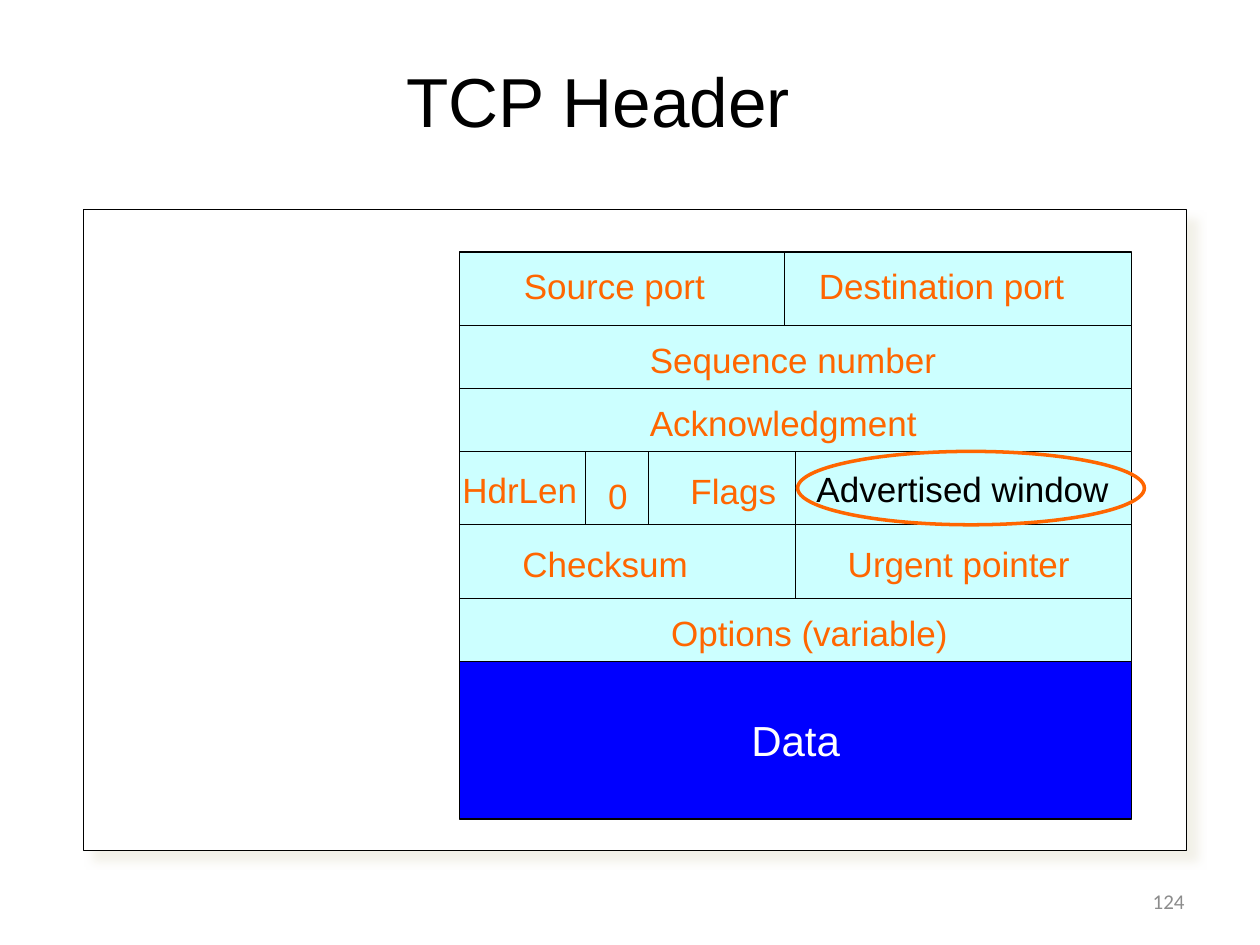
from lxml import etree
from pptx import Presentation
from pptx.dml.color import RGBColor
from pptx.enum.shapes import MSO_CONNECTOR, MSO_SHAPE
from pptx.enum.text import MSO_ANCHOR, MSO_AUTO_SIZE, PP_ALIGN
from pptx.oxml import parse_xml
from pptx.oxml.ns import qn
from pptx.util import Cm, Pt

BLACK, WHITE, ORANGE = "000000", "FFFFFF", "FF6600"
PALE, BLUE, GREY = "CCFFFF", "0000FF", "8C8C8C"

# All lengths are in centimetres.
HEADER_LEFT, HEADER_TOP, HEADER_WIDTH = 9.27, 5.08, 13.54
HALF = HEADER_WIDTH / 2

# Each row: height, field widths, labels as (text, left, drop below row top, width)
ROWS = [
    (1.48, [6.55, 6.99], [("Source port", 10.31, 0.13, 4.25),
                          ("Destination port", 16.26, 0.13, 5.55)]),
    (1.27, [HEADER_WIDTH], [("Sequence number", 12.85, 0.13, 6.4)]),
    (1.27, [HEADER_WIDTH], [("Acknowledgment", 12.85, 0.13, 6)]),
    (1.48, [HALF, HALF], [("Advertised window", 16.21, 0.2, 6.48),
                          ("HdrLen", 9.07, 0.22, 2.97),
                          ("Flags", 13.67, 0.25, 2.24),
                          ("0", 12.01, 0.35, 0.91)]),
    (1.48, [HALF, HALF], [("Checksum", 10.28, 0.24, 3.85),
                          ("Urgent pointer", 16.84, 0.24, 5.05)]),
    (1.27, [HEADER_WIDTH], [("Options (variable)", 13.28, 0.14, 6.2)]),
]
FLAGS_ROW = 3
FLAG_DIVIDERS = [11.81, 13.08]
HIGHLIGHTED = "Advertised window"
DATA_HEIGHT, LABEL_HEIGHT = 3.18, 1.1


def color(hex_value):
    return RGBColor.from_string(hex_value)


def write(shape, text, size, hex_value, font="Arial", align=PP_ALIGN.LEFT, **frame_format):
    frame = shape.text_frame
    for name, value in frame_format.items():
        setattr(frame, name, value)
    paragraph = frame.paragraphs[0]
    paragraph.alignment = align
    run = paragraph.add_run()
    run.text = text
    for name, value in {"size": Pt(size), "name": font}.items():
        setattr(run.font, name, value)
    run.font.color.rgb = color(hex_value)


def add_box(slide, left, top, width, height, fill=None, line=BLACK, line_width=0.75,
            kind=MSO_SHAPE.RECTANGLE):
    shape = slide.shapes.add_shape(kind, Cm(left), Cm(top), Cm(width), Cm(height))
    shape.shadow.inherit = False
    if fill:
        shape.fill.solid()
        shape.fill.fore_color.rgb = color(fill)
    else:
        shape.fill.background()
    shape.line.color.rgb = color(line)
    shape.line.width = Pt(line_width)
    return shape


def add_panel(slide):
    """Add the white backing panel with its soft shadow."""
    panel = add_box(slide, 1.69, 4.23, 22.23, 12.91, WHITE)
    effects = panel._element.spPr.find(qn("a:effectLst"))
    effects.append(parse_xml(
        '<a:outerShdw xmlns:a="http://schemas.openxmlformats.org/drawingml/2006/main"'
        f' blurRad="{Pt(5)}" dist="{Pt(8.5)}" dir="2700000" algn="tl" rotWithShape="0">'
        '<a:srgbClr val="EEECE1"><a:alpha val="75000"/></a:srgbClr></a:outerShdw>'))


def add_label(slide, text, left, top, width):
    label = slide.shapes.add_textbox(Cm(left), Cm(top), Cm(width), Cm(LABEL_HEIGHT))
    if text != "HdrLen":  # this label overlaps the header's left edge
        label.fill.solid()
        label.fill.fore_color.rgb = color(PALE)
    write(label, text, 20, BLACK if text == HIGHLIGHTED else ORANGE,
          word_wrap=text == "HdrLen", auto_size=MSO_AUTO_SIZE.SHAPE_TO_FIT_TEXT)


def add_divider(slide, x, top, height):
    divider = slide.shapes.add_connector(
        MSO_CONNECTOR.STRAIGHT, Cm(x), Cm(top), Cm(x), Cm(top + height))
    divider.line.color.rgb = color(BLACK)
    divider.line.width = Pt(0.75)
    etree.SubElement(divider._element.spPr, qn("a:effectLst"))


def add_header(slide):
    top = HEADER_TOP
    for index, (height, widths, labels) in enumerate(ROWS):
        left = HEADER_LEFT
        for width in widths:
            add_box(slide, left, top, width, height, PALE)
            left += width
        for text, label_left, drop, width in labels:
            add_label(slide, text, label_left, top + drop, width)
        if index == FLAGS_ROW:
            for x in FLAG_DIVIDERS:
                add_divider(slide, x, top, height)
            flags_top, flags_height = top, height
        top += height
    data = add_box(slide, HEADER_LEFT, top, HEADER_WIDTH, DATA_HEIGHT, BLUE)
    write(data, "Data", 24, WHITE, align=PP_ALIGN.CENTER,
          word_wrap=False, vertical_anchor=MSO_ANCHOR.MIDDLE)
    add_box(slide, 16.08, flags_top, 6.99, flags_height, line=ORANGE, line_width=2,
            kind=MSO_SHAPE.OVAL)


def main():
    presentation = Presentation()
    presentation.slide_width, presentation.slide_height = Cm(25.4), Cm(19.05)
    slide = presentation.slides.add_slide(presentation.slide_layouts[5])

    title = slide.shapes.title
    position = {"left": 0.86, "top": 1.07, "width": 22.4, "height": 1.9}
    for name, value in position.items():
        setattr(title, name, Cm(value))
    write(title, "TCP Header", 39.6, BLACK, align=PP_ALIGN.CENTER,
          vertical_anchor=MSO_ANCHOR.MIDDLE, auto_size=MSO_AUTO_SIZE.NONE)

    add_panel(slide)
    add_header(slide)

    number = slide.shapes.add_textbox(Cm(18.21), Cm(17.65), Cm(5.92), Cm(1.02))
    write(number, "124", 12, GREY, font="Calibri", align=PP_ALIGN.RIGHT,
          word_wrap=True, vertical_anchor=MSO_ANCHOR.MIDDLE)
    presentation.save("out.pptx")


if __name__ == "__main__":
    main()
